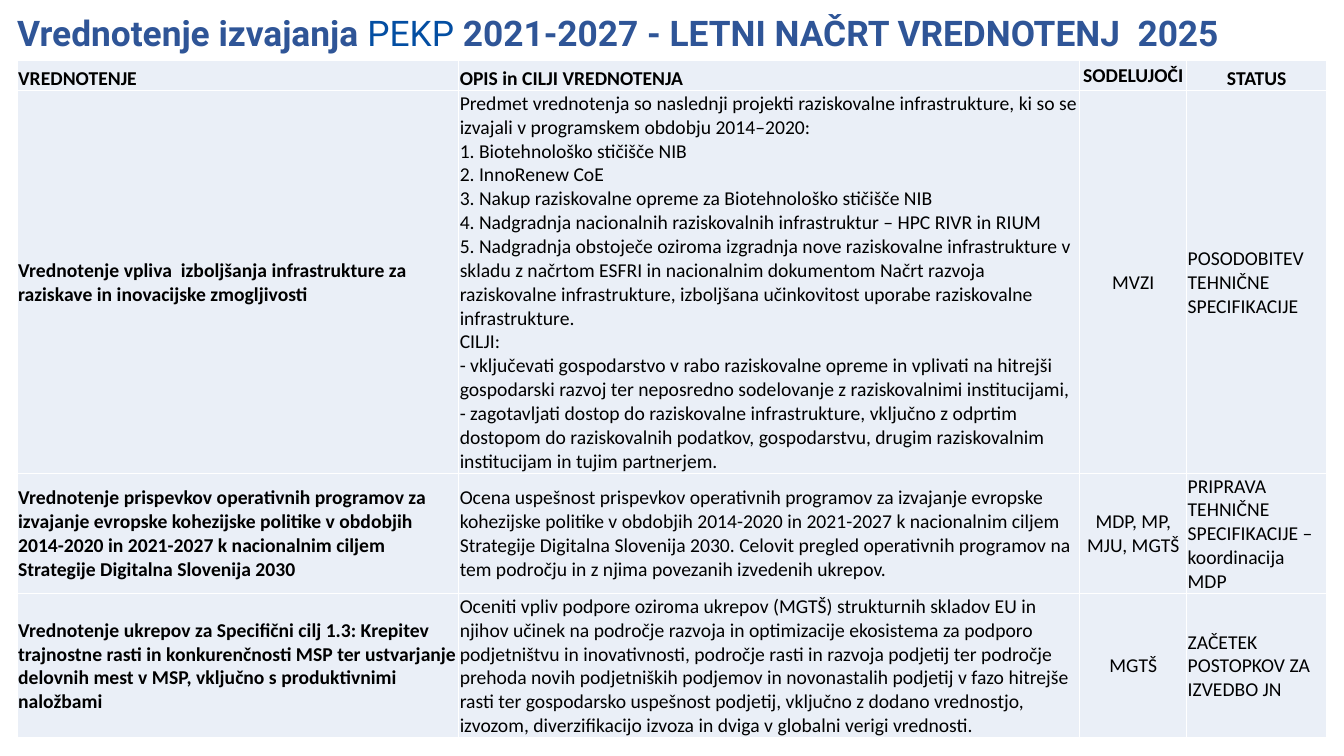
from typing import NamedTuple

from lxml.etree import SubElement
from pptx import Presentation
from pptx.dml.color import RGBColor
from pptx.enum.text import MSO_ANCHOR as Anchor, MSO_AUTO_SIZE as Fit, PP_ALIGN as Align
from pptx.oxml.ns import qn
from pptx.util import Inches, Pt

BLACK, WHITE, PALE = "000000", "FFFFFF", "EAEFF7"
NAVY, BLUE = "2F5597", "034EA2"
COLS = (4.38, 6.16, 1.06, 1.39)


class Row(NamedTuple):
    height: float
    texts: tuple[str, ...]
    bold: tuple[bool, ...]
    anchors: tuple[Anchor, ...]
    aligns: tuple[Align, ...] = (Align.LEFT, Align.LEFT, Align.CENTER, Align.LEFT)


FIRST = (True, False, False, False)
MID, LOW = Anchor.MIDDLE, Anchor.BOTTOM

INFRA = (
    "Predmet vrednotenja so naslednji projekti raziskovalne infrastrukture, ki so se "
    "izvajali v programskem obdobju 2014–2020:",
    "1. Biotehnološko stičišče NIB",
    "2. InnoRenew CoE",
    "3. Nakup raziskovalne opreme za Biotehnološko stičišče NIB",
    "4. Nadgradnja nacionalnih raziskovalnih infrastruktur – HPC RIVR in RIUM",
    "5. Nadgradnja obstoječe oziroma izgradnja nove raziskovalne infrastrukture v "
    "skladu z načrtom ESFRI in nacionalnim dokumentom Načrt razvoja raziskovalne "
    "infrastrukture, izboljšana učinkovitost uporabe raziskovalne infrastrukture.",
    "CILJI:",
    "- vključevati gospodarstvo v rabo raziskovalne opreme in vplivati na hitrejši "
    "gospodarski razvoj ter neposredno sodelovanje z raziskovalnimi institucijami,",
    "- zagotavljati dostop do raziskovalne infrastrukture, vključno z odprtim dostopom "
    "do raziskovalnih podatkov, gospodarstvu, drugim raziskovalnim institucijam in "
    "tujim partnerjem.",
)

ROWS = (
    Row(0.3, ("VREDNOTENJE", "OPIS in CILJI VREDNOTENJA", "SODELUJOČI", "STATUS"),
        (True,) * 4, (LOW, LOW, MID, LOW),
        (Align.LEFT, Align.LEFT, Align.CENTER, Align.CENTER)),
    Row(2.68, (
        "Vrednotenje vpliva  izboljšanja infrastrukture za raziskave in inovacijske "
        "zmogljivosti",
        "\n".join(INFRA),
        "MVZI",
        "POSODOBITEV TEHNIČNE SPECIFIKACIJE"),
        FIRST, (MID,) * 4),
    Row(0.72, (
        "Vrednotenje prispevkov operativnih programov za izvajanje evropske kohezijske "
        "politike v obdobjih 2014-2020 in 2021-2027 k nacionalnim ciljem Strategije "
        "Digitalna Slovenija 2030",
        "Ocena uspešnost prispevkov operativnih programov za izvajanje evropske kohezijske "
        "politike v obdobjih 2014-2020 in 2021-2027 k nacionalnim ciljem Strategije "
        "Digitalna Slovenija 2030. Celovit pregled operativnih programov na tem področju "
        "in z njima povezanih izvedenih ukrepov.",
        "MDP, MP, MJU, MGTŠ",
        "PRIPRAVA TEHNIČNE SPECIFIKACIJE – koordinacija MDP"),
        FIRST, (MID,) * 4),
    Row(1.04, (
        "Vrednotenje ukrepov za Specifični cilj 1.3: Krepitev trajnostne rasti in "
        "konkurenčnosti MSP ter ustvarjanje delovnih mest v MSP, vključno s "
        "produktivnimi naložbami",
        "Oceniti vpliv podpore oziroma ukrepov (MGTŠ) strukturnih skladov EU in njihov "
        "učinek na področje razvoja in optimizacije ekosistema za podporo podjetništvu in "
        "inovativnosti, področje rasti in razvoja podjetij ter področje prehoda novih "
        "podjetniških podjemov in novonastalih podjetij v fazo hitrejše rasti ter "
        "gospodarsko uspešnost podjetij, vključno z dodano vrednostjo, izvozom, "
        "diverzifikacijo izvoza in dviga v globalni verigi vrednosti.",
        "MGTŠ",
        "ZAČETEK POSTOPKOV ZA IZVEDBO JN"),
        FIRST, (MID, LOW, MID, MID)),
)


def color(code: str) -> RGBColor:
    return RGBColor.from_string(code)


def write(para, text: str, *, size: float = 14, face: str = "Calibri",
          tint: str = BLACK, bold: bool = False) -> None:
    run = para.add_run()
    run.text = text
    font = run.font
    font.size, font.name, font.bold = Pt(size), face, bold
    font.color.rgb = color(tint)


def style(cell) -> None:
    """Set borders, fill and margins; borders precede the fill in the XML."""
    props = cell._tc.get_or_add_tcPr()
    for side in ("a:lnL", "a:lnR", "a:lnT", "a:lnB"):
        line = SubElement(props, qn(side), w=str(Pt(1)))
        fill = SubElement(line, qn("a:solidFill"))
        SubElement(fill, qn("a:srgbClr"), val=WHITE)
    cell.fill.solid()
    cell.fill.fore_color.rgb = color(PALE)
    cell.margin_left = cell.margin_right = cell.margin_top = Inches(0.01)
    cell.margin_bottom = 0


def add_title(slide) -> None:
    title = slide.shapes.title
    title.left, title.top = Inches(0.07), Inches(0.15)
    title.width, title.height = Inches(13.27), Inches(0.77)
    frame = title.text_frame
    frame.auto_size, frame.word_wrap = Fit.NONE, True
    frame.vertical_anchor, frame.margin_top = Anchor.TOP, Inches(0.01)
    para = frame.paragraphs[0]
    para.alignment, para.line_spacing = Align.LEFT, 0.9
    for text, tint, bold in (
        ("Vrednotenje izvajanja ", NAVY, True),
        ("PEKP", BLUE, False),
        (" 2021-2027 - LETNI NAČRT VREDNOTENJ  2025", NAVY, True),
    ):
        write(para, text, size=25.2, face="Roboto", tint=tint, bold=bold)


def add_plan(slide) -> None:
    height = sum(row.height for row in ROWS)
    table = slide.shapes.add_table(
        len(ROWS), len(COLS), Inches(0.17), Inches(0.6),
        Inches(sum(COLS)), Inches(height)).table
    table.first_row = table.horz_banding = False
    for col, width in zip(table.columns, COLS):
        col.width = Inches(width)
    for line, row in zip(table.rows, ROWS):
        line.height = Inches(row.height)
        for cell, text, bold, anchor, align in zip(
                line.cells, row.texts, row.bold, row.anchors, row.aligns):
            style(cell)
            cell.vertical_anchor = anchor
            frame = cell.text_frame
            for i, part in enumerate(text.split("\n")):
                para = frame.add_paragraph() if i else frame.paragraphs[0]
                para.alignment = align
                write(para, part, bold=bold)


def main() -> None:
    deck = Presentation()
    deck.slide_width, deck.slide_height = Inches(13.33), Inches(7.5)
    slide = deck.slides.add_slide(deck.slide_layouts[5])
    add_title(slide)
    add_plan(slide)
    deck.save("out.pptx")


if __name__ == "__main__":
    main()
